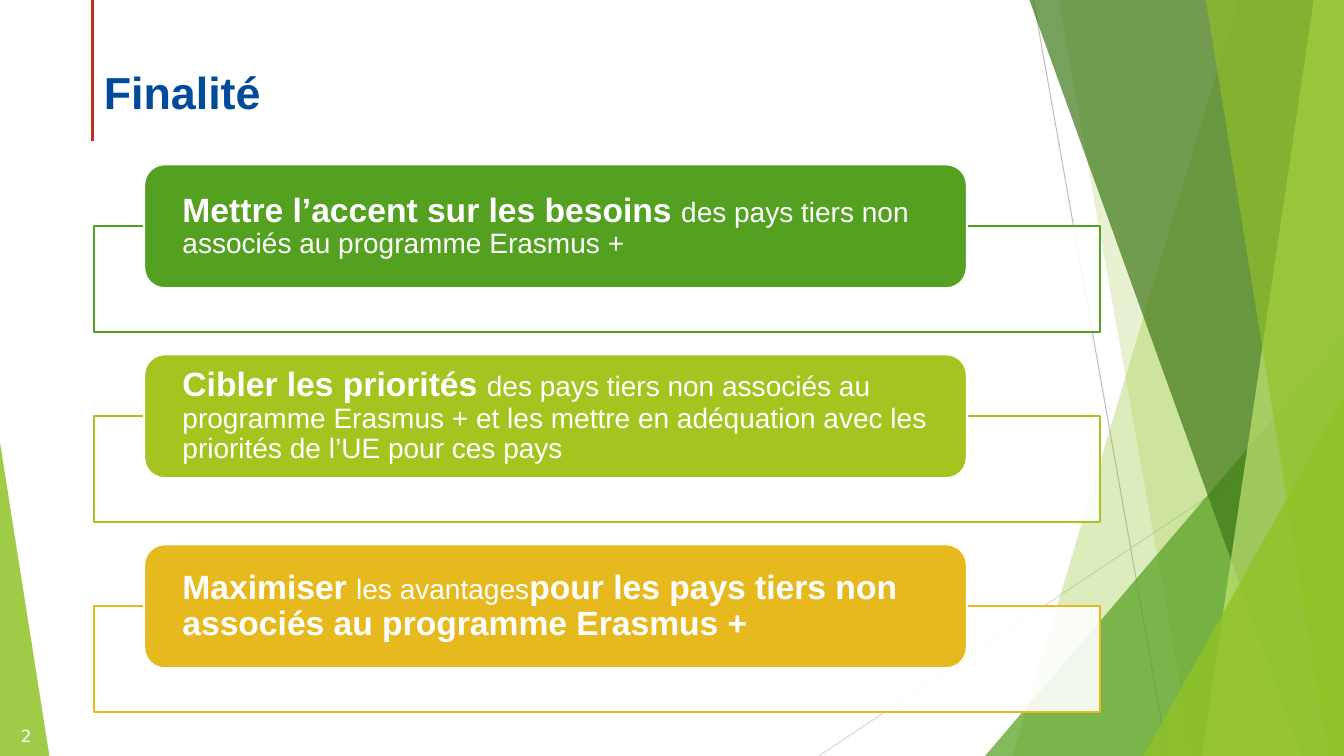
from dataclasses import dataclass

from lxml.etree import SubElement
from pptx import Presentation
from pptx.dml.color import RGBColor
from pptx.enum.shapes import MSO_CONNECTOR, MSO_SHAPE
from pptx.enum.text import MSO_ANCHOR, PP_ALIGN
from pptx.oxml.ns import qn
from pptx.util import Inches, Pt

# Content
TITLE = "Finalité"
NUMBER = "2"
# One goal per card: colour, then runs of (text, emphasised)
GOALS = [
    ("54A021", [("Mettre l’accent sur les besoins ", True),
                ("des pays tiers non associés au programme Erasmus +", False)]),
    ("A5C41F", [("Cibler les priorités ", True),
                ("des pays tiers non associés au programme Erasmus + et les mettre "
                 "en adéquation avec les priorités de l’UE pour ces pays", False)]),
    ("E6B91E", [("Maximiser ", True), ("les avantages", False),
                ("pour les pays tiers non associés au programme Erasmus +", True)]),
]


@dataclass(frozen=True)
class Theme:
    font: str = "Arial"
    number_font: str = "DejaVu Sans"
    title_color: str = "024B9C"
    white: str = "FFFFFF"
    accent: str = "C42F1A"
    lime: str = "90C226"
    title: int = 32
    strong: int = 24
    body: int = 20
    number: int = 12


T = Theme()
W, H = 13.33, 7.5

# Decoration, back to front
LINES = [((10.25, 0), (11.58, H), "BFBFBF", 0.75),
         ((W, 4.03), (8.12, H), "D9D9D9", 0.75),
         ((0.92, 0), (0.92, 1.4), T.accent, 2.25)]
# Facets reach the right edge: (top x, bottom x); triangles: (left, top, width, apex)
DECOR = [("facet", (12.28, 10.04), T.lime, 30),
         ("facet", (10.5, 11.83), T.lime, 20),
         ("triangle", (9.77, 3.33, 3.56, 1), "54A021", 72),
         ("facet", (10.21, 12.91), "3F7819", 70),
         ("facet", (13.03, 11.92), "C0E474", 70),
         ("facet", (11.96, 13.18), T.lime, 65),
         ("triangle", (11.34, 3.93, 1.99, 1), T.lime, 80),
         ("triangle", (0, 4.39, 0.49, 0), T.lime, 85)]

# Card grid
LEFT, FRAME_W, FRAME_H = 0.93, 9.98, 1.05
CARD_X, CARD_W, CARD_H = 1.43, 8.16, 1.23
CARD_TOP, FRAME_DROP, PITCH = 1.63, 0.61, 1.885

prs = Presentation()
prs.slide_width, prs.slide_height = Inches(W), Inches(H)
s = prs.slides.add_slide(prs.slide_layouts[5])


def paint(sp, color, opacity=100, line=None):
    sp.shadow.inherit = False
    sp.fill.solid()
    sp.fill.fore_color.rgb = RGBColor.from_string(color)
    if opacity < 100:
        clr = sp.fill._xPr.find(qn("a:solidFill"))[0]
        SubElement(clr, qn("a:alpha"), val=str(opacity * 1000))
    if line:
        sp.line.color.rgb = RGBColor.from_string(line)
        sp.line.width = Pt(1.5)
    else:
        sp.line.fill.background()


def add_box(kind, x, y, w, h):
    return s.shapes.add_shape(kind, Inches(x), Inches(y), Inches(w), Inches(h))


def add_run(p, text, size, color=T.white, bold=False, font=T.font):
    r = p.add_run()
    r.text = text
    r.font.size, r.font.bold, r.font.name = Pt(size), bold, font
    r.font.color.rgb = RGBColor.from_string(color)


# Background lines
for start, end, color, width in LINES:
    c = s.shapes.add_connector(MSO_CONNECTOR.STRAIGHT,
                               *(Inches(v) for v in start + end))
    c.line.color.rgb = RGBColor.from_string(color)
    c.line.width = Pt(width)
    SubElement(c._element.spPr, qn("a:effectLst"))

# Translucent facets and triangles
for kind, geometry, color, opacity in DECOR:
    if kind == "facet":
        top, bottom = geometry
        fb = s.shapes.build_freeform(Inches(top), 0)
        fb.add_line_segments([(Inches(x), Inches(y)) for x, y in
                              ((W, 0), (W, H), (bottom, H))], close=True)
        sp = fb.convert_to_shape()
    else:
        x, y, w, apex = geometry
        sp = add_box(MSO_SHAPE.ISOSCELES_TRIANGLE, x, y, w, H - y)
        sp.adjustments[0] = apex
    paint(sp, color, opacity)

# Goal cards, each over its frame
for i, (color, runs) in enumerate(GOALS):
    y = CARD_TOP + i * PITCH
    frame = add_box(MSO_SHAPE.RECTANGLE, LEFT, y + FRAME_DROP, FRAME_W, FRAME_H)
    paint(frame, T.white, 90, color)
    card = add_box(MSO_SHAPE.ROUNDED_RECTANGLE, CARD_X, y, CARD_W, CARD_H)
    paint(card, color, line=T.white)
    tf = card.text_frame
    tf.word_wrap, tf.vertical_anchor = True, MSO_ANCHOR.MIDDLE
    tf.margin_left = tf.margin_right = Inches(0.32)
    tf.margin_top = tf.margin_bottom = 0
    p = tf.paragraphs[0]
    p.alignment, p.line_spacing = PP_ALIGN.LEFT, 0.9
    for text, strong in runs:
        add_run(p, text, T.strong if strong else T.body, bold=strong)

# Title
title = s.shapes.title
title.left, title.top = Inches(LEFT), Inches(0.54)
title.width, title.height = Inches(9.54), Inches(0.84)
tf = title.text_frame
tf.vertical_anchor, tf.margin_top = MSO_ANCHOR.TOP, Inches(0.1)
p = tf.paragraphs[0]
p.alignment = PP_ALIGN.LEFT
add_run(p, TITLE, T.title, T.title_color, True)

# Slide number
tf = s.shapes.add_textbox(0, Inches(7.1), Inches(0.52), Inches(0.4)).text_frame
tf.word_wrap, tf.vertical_anchor = True, MSO_ANCHOR.MIDDLE
p = tf.paragraphs[0]
p.alignment = PP_ALIGN.CENTER
add_run(p, NUMBER, T.number, font=T.number_font)

prs.save("out.pptx")
